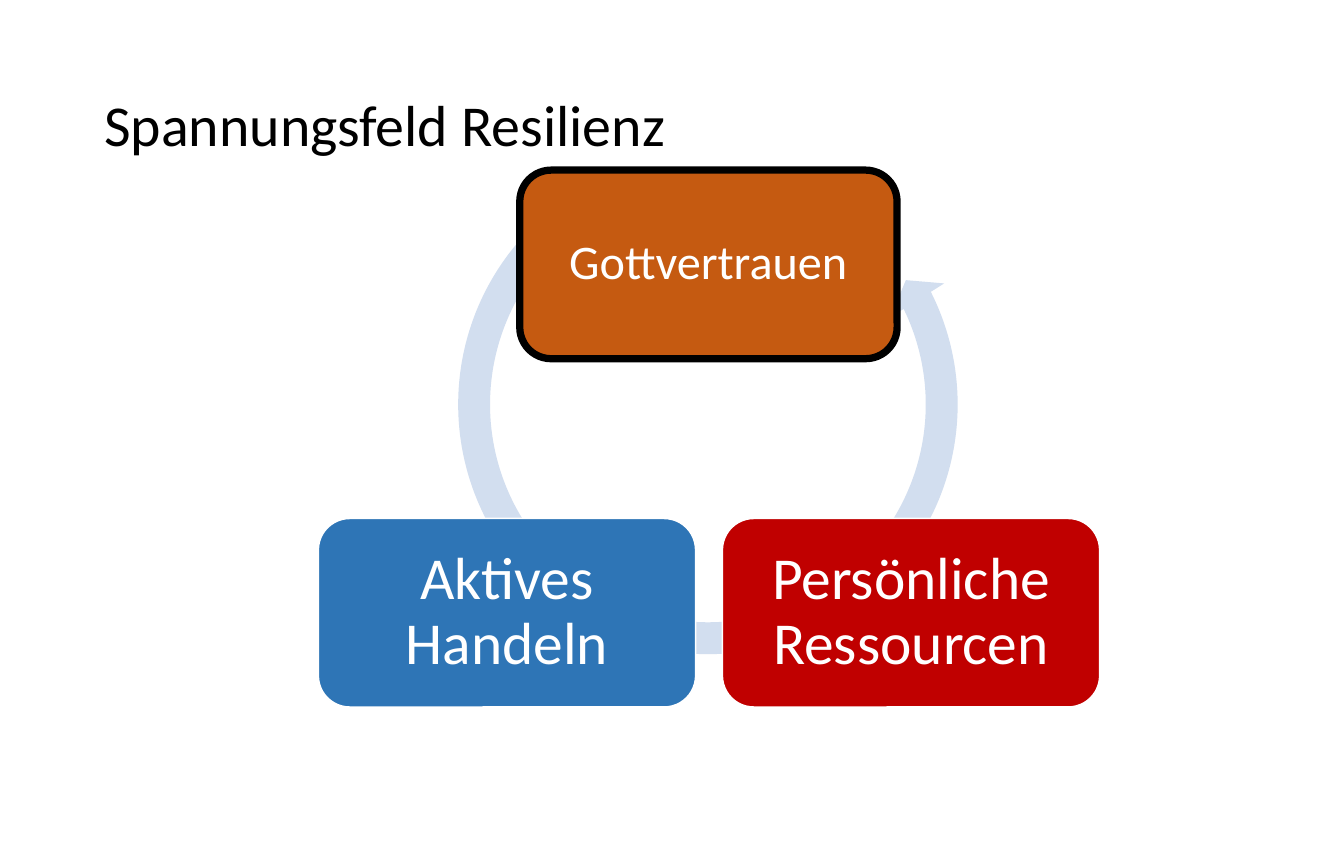
from pptx import Presentation
from pptx import util as u
from pptx.dml import color
from pptx.enum import shapes, text


def rgb(value):
    return color.RGBColor.from_string(value)


class CycleSlide:
    font = "Calibri"
    node_width, node_height = 3.26, 1.63

    def __init__(self, presentation):
        self.slide = presentation.slides.add_slide(presentation.slide_layouts[5])

    def set_text(self, frame, words, size, ink, alignment):
        frame.word_wrap = True
        frame.auto_size = text.MSO_AUTO_SIZE.NONE
        frame.vertical_anchor = text.MSO_ANCHOR.MIDDLE
        paragraph = frame.paragraphs[0]
        paragraph.text = words
        paragraph.alignment = alignment
        paragraph.line_spacing = 0.9
        paragraph.font.name = self.font
        paragraph.font.size = u.Pt(size)
        paragraph.font.color.rgb = rgb(ink)

    def title(self, words, left, top, width, height):
        title = self.slide.shapes.title
        title.left, title.top = u.Inches(left), u.Inches(top)
        title.width, title.height = u.Inches(width), u.Inches(height)
        self.set_text(title.text_frame, words, 36, "000000", text.PP_ALIGN.LEFT)

    def shape(self, kind, left, top, width, height, fill):
        shape = self.slide.shapes.add_shape(
            kind, u.Inches(left), u.Inches(top), u.Inches(width), u.Inches(height))
        shape.shadow.inherit = False
        shape.fill.solid()
        shape.fill.fore_color.rgb = rgb(fill)
        return shape

    def cycle_arrow(self, left, top, size, fill, adjustments):
        arrow = self.shape(shapes.MSO_SHAPE.LEFT_CIRCULAR_ARROW,
                           left, top, size, size, fill)
        arrow.line.fill.background()
        for index, value in enumerate(adjustments):
            arrow.adjustments[index] = value

    def node(self, words, left, top, fill, outline, weight, size, inset):
        node = self.shape(shapes.MSO_SHAPE.ROUNDED_RECTANGLE,
                          left, top, self.node_width, self.node_height, fill)
        node.line.color.rgb = rgb(outline)
        node.line.width = u.Pt(weight)
        frame = node.text_frame
        frame.margin_left = frame.margin_right = u.Inches(inset)
        frame.margin_top = frame.margin_bottom = u.Inches(inset)
        self.set_text(frame, words, size, "FFFFFF", text.PP_ALIGN.CENTER)


def main():
    presentation = Presentation()
    presentation.slide_width = u.Inches(11.61)
    presentation.slide_height = u.Inches(7.5)

    cycle = CycleSlide(presentation)
    cycle.title("Spannungsfeld Resilienz", 0.8, 0.69, 10.46, 0.82)
    cycle.cycle_arrow(3.82, 1.2, 4.59, "D2DEEF", (0.06, 3.41, 200.13, 141.05, 0.06))
    cycle.node("Gottvertrauen", 4.49, 1.47, "C55A11", "000000", 4.5, 30, 0.12)
    for words, left, fill in (("Aktives\vHandeln", 2.75, "2E75B6"),
                              ("Persönliche\vRessourcen", 6.24, "C00000")):
        cycle.node(words, left, 4.48, fill, "FFFFFF", 1, 37, 0.15)

    presentation.save("out.pptx")


if __name__ == "__main__":
    main()
